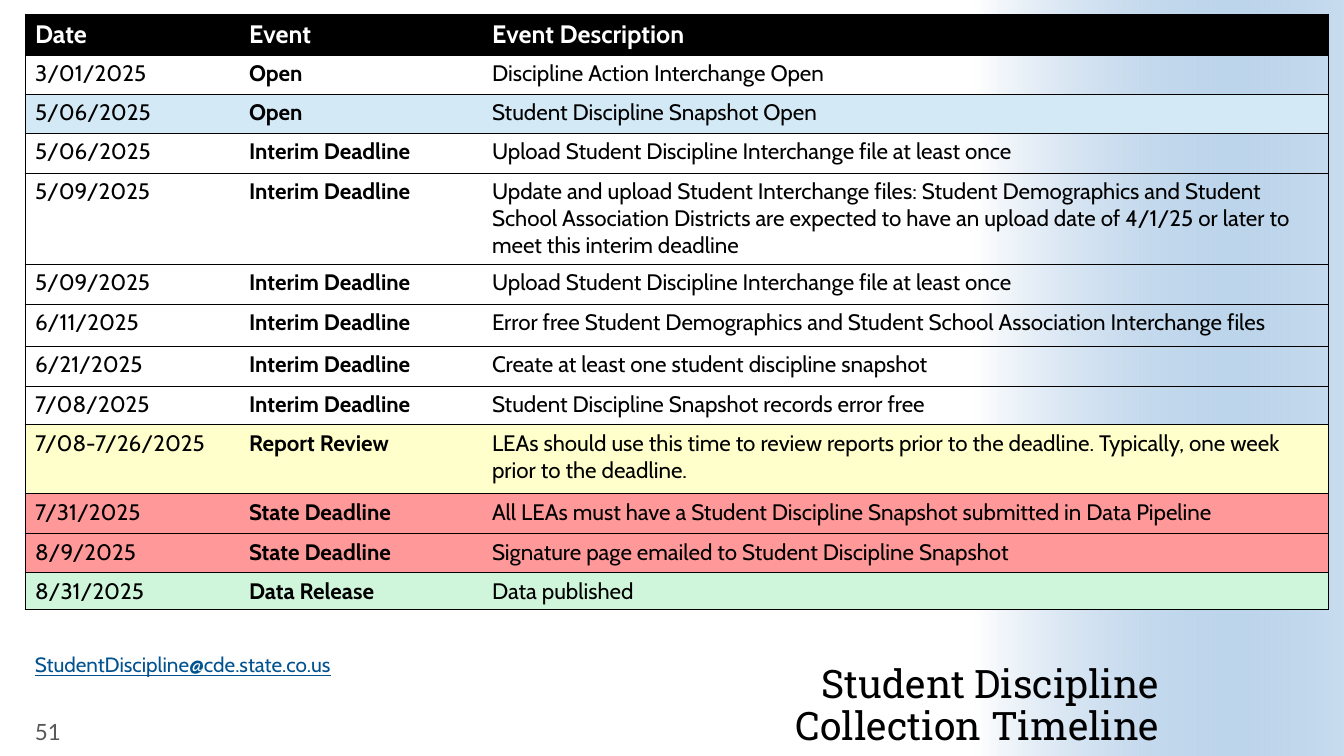
from dataclasses import dataclass

from lxml import etree
from pptx import Presentation
from pptx.dml.color import RGBColor
from pptx.enum.shapes import MSO_SHAPE
from pptx.enum.text import MSO_ANCHOR, PP_ALIGN
from pptx.oxml.ns import qn
from pptx.util import Emu, Pt

RECTANGLE = MSO_SHAPE.RECTANGLE
TOP, MIDDLE, BOTTOM = MSO_ANCHOR.TOP, MSO_ANCHOR.MIDDLE, MSO_ANCHOR.BOTTOM
LEFT, RIGHT = PP_ALIGN.LEFT, PP_ALIGN.RIGHT

SLIDE_WIDTH, SLIDE_HEIGHT = 1344, 756
EMU_PER_PX = 12192000 / SLIDE_WIDTH


@dataclass(frozen=True)
class Theme:
    black: str = "000000"
    white: str = "FFFFFF"
    grey: str = "595959"
    link: str = "005390"
    glow: str = "488BC9"
    glow_opacity: int = 30
    opened: str = "D3E9F5"
    review: str = "FFFFCC"
    deadline: str = "FF9999"
    release: str = "CFF5DA"
    body_font: str = "Cabin"
    title_font: str = "Roboto Slab"
    number_font: str = "Lato"
    title_size: float = 28
    header_size: float = 18
    body_size: float = 16
    email_size: float = 14.8
    border_width: float = 0.5


THEME = Theme()

HEADER = ("Date", "Event", "Event Description")
COLUMN_WIDTHS = (214, 243, 846)

# Row height, fill, date, event, description
EVENTS = (
    (39, None, "3/01/2025", "Open", "Discipline Action Interchange Open"),
    (39, THEME.opened, "5/06/2025", "Open", "Student Discipline Snapshot Open"),
    (40, None, "5/06/2025", "Interim Deadline",
     "Upload Student Discipline Interchange file at least once"),
    (91, None, "5/09/2025", "Interim Deadline",
     "Update and upload Student Interchange files: Student Demographics and Student "
     "School Association Districts are expected to have an upload date of 4/1/25 "
     "or later to meet this interim deadline"),
    (40, None, "5/09/2025", "Interim Deadline",
     "Upload Student Discipline Interchange file at least once"),
    (42, None, "6/11/2025", "Interim Deadline",
     "Error free Student Demographics and Student School Association Interchange files"),
    (40, None, "6/21/2025", "Interim Deadline",
     "Create at least one student discipline snapshot"),
    (39, None, "7/08/2025", "Interim Deadline",
     "Student Discipline Snapshot records error free"),
    (69, THEME.review, "7/08-7/26/2025", "Report Review",
     "LEAs should use this time to review reports prior to the deadline. "
     "Typically, one week prior to the deadline."),
    (40, THEME.deadline, "7/31/2025", "State Deadline",
     "All LEAs must have a Student Discipline Snapshot submitted in Data Pipeline"),
    (39, THEME.deadline, "8/9/2025", "State Deadline",
     "Signature page emailed to Student Discipline Snapshot"),
    (37, THEME.release, "8/31/2025", "Data Release", "Data published"),
)


def px(length):
    return Emu(round(length * EMU_PER_PX))


def add_span(para, text, font, size, color, bold=False, underline=False):
    span = para.add_run()
    span.text = text
    span.font.name = font
    span.font.size = Pt(size)
    span.font.bold = bold
    span.font.underline = underline
    span.font.color.rgb = RGBColor.from_string(color)


def add_text(page, place, lines, font, size, color, anchor=TOP, align=LEFT,
             spacing=1.0, padded=True, underline=False):
    box = page.shapes.add_textbox(*map(px, place))
    frame = box.text_frame
    frame.word_wrap = True
    frame.vertical_anchor = anchor
    if not padded:
        frame.margin_left = frame.margin_right = 0
        frame.margin_top = frame.margin_bottom = 0
    para = frame.paragraphs[0]
    para.alignment = align
    para.line_spacing = spacing
    for index, line in enumerate(lines):
        if index:
            para.add_line_break()
        add_span(para, line, font, size, color, underline=underline)


def add_glow(page, left, width):
    """Fade to blue on the right: a flat rectangle turned to full slide height."""
    glow = page.shapes.add_shape(
        RECTANGLE,
        px(left + (width - SLIDE_HEIGHT) / 2), px((SLIDE_HEIGHT - width) / 2),
        px(SLIDE_HEIGHT), px(width))
    glow.rotation = 270
    glow.shadow.inherit = False
    glow.line.fill.background()
    glow.fill.gradient()
    glow.fill.gradient_angle = 270
    for stop, color in zip(glow.fill.gradient_stops, (THEME.white, THEME.glow)):
        stop.color.rgb = RGBColor.from_string(color)
    last_color = glow._element.spPr.findall(".//" + qn("a:srgbClr"))[-1]
    etree.SubElement(last_color, qn("a:alpha"), val=str(THEME.glow_opacity * 1000))


def set_borders(cell, visible):
    properties = cell._tc.get_or_add_tcPr()
    for side in ("L", "R", "T", "B"):
        line = etree.SubElement(properties, qn("a:ln" + side),
                                w=str(Pt(THEME.border_width)))
        if side in visible:
            solid = etree.SubElement(line, qn("a:solidFill"))
            etree.SubElement(solid, qn("a:srgbClr"), val=THEME.black)
        else:
            etree.SubElement(line, qn("a:noFill"))


def fill_cell(cell, text, fill, borders, size, color, bold):
    set_borders(cell, borders)
    if fill:
        cell.fill.solid()
        cell.fill.fore_color.rgb = RGBColor.from_string(fill)
    else:
        cell.fill.background()
    add_span(cell.text_frame.paragraphs[0], text, THEME.body_font, size, color, bold)


def add_timeline(page, left, top):
    rows = ((41, THEME.black) + HEADER,) + EVENTS
    heights = [row[0] for row in rows]
    table = page.shapes.add_table(
        len(rows), len(HEADER), px(left), px(top),
        px(sum(COLUMN_WIDTHS)), px(sum(heights))).table
    table.horz_banding = False
    for column, width in zip(table.columns, COLUMN_WIDTHS):
        column.width = px(width)
    for row_index, (height, fill, *texts) in enumerate(rows):
        table.rows[row_index].height = px(height)
        is_header = row_index == 0
        size = THEME.header_size if is_header else THEME.body_size
        color = THEME.white if is_header else THEME.black
        for column_index, (text, outer) in enumerate(zip(texts, ("L", "", "R"))):
            bold = is_header or column_index == 1
            fill_cell(table.cell(row_index, column_index), text, fill,
                      "TB" + outer, size, color, bold)


def main():
    deck = Presentation()
    deck.slide_width, deck.slide_height = px(SLIDE_WIDTH), px(SLIDE_HEIGHT)
    page = deck.slides.add_slide(deck.slide_layouts[6])

    # Background
    page.background.fill.solid()
    page.background.fill.fore_color.rgb = RGBColor.from_string(THEME.white)
    add_glow(page, 975, 369)

    # Title, page number and contact
    add_text(page, (429, 650, 730, 99), ("Student Discipline", "Collection Timeline"),
             THEME.title_font, THEME.title_size, THEME.black,
             anchor=BOTTOM, align=RIGHT, spacing=0.9, padded=False)
    add_text(page, (25, 716, 86, 31), ("51",),
             THEME.number_font, THEME.body_size, THEME.grey, anchor=MIDDLE)
    add_text(page, (25, 652, 392, 31), ("StudentDiscipline@cde.state.co.us",),
             THEME.body_font, THEME.email_size, THEME.link,
             spacing=0.8, underline=True)

    # Timeline table
    add_timeline(page, 25, 14)

    deck.save("out.pptx")


if __name__ == "__main__":
    main()
